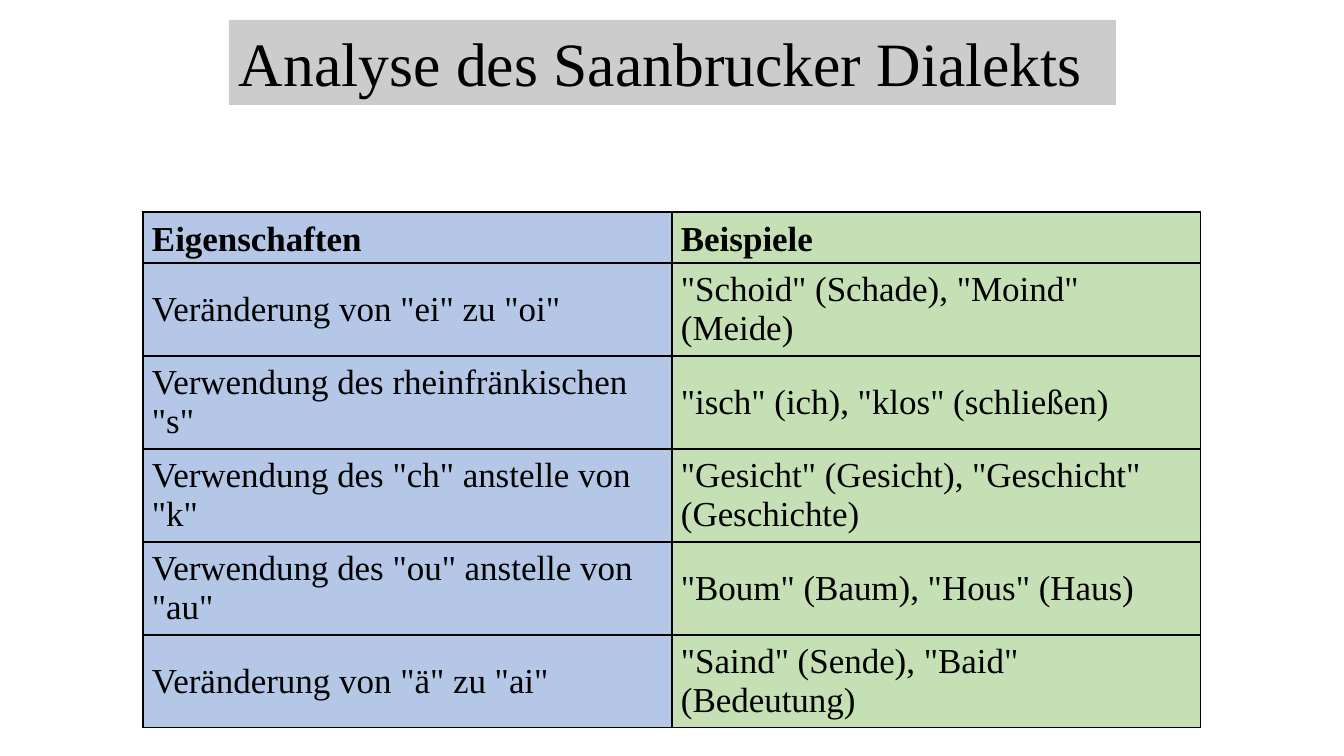
import pptx
import pptx.dml.color
import pptx.enum.shapes
import pptx.enum.text
import pptx.oxml.ns
import pptx.util
from lxml import etree

TITLE = "Analyse des Saanbrucker Dialekts"
ROWS = [
    ("Eigenschaften", "Beispiele"),
    ('Veränderung von "ei" zu "oi"', '"Schoid" (Schade), "Moind" (Meide)'),
    ('Verwendung des rheinfränkischen "s"', '"isch" (ich), "klos" (schließen)'),
    ('Verwendung des "ch" anstelle von "k"', '"Gesicht" (Gesicht), "Geschicht" (Geschichte)'),
    ('Verwendung des "ou" anstelle von "au"', '"Boum" (Baum), "Hous" (Haus)'),
    ('Veränderung von "ä" zu "ai"', '"Saind" (Sende), "Baid" (Bedeutung)'),
]

THEME = {
    "font": "Times New Roman",
    "ink": "000000",
    "title_opacity": 20,
    "columns": ("B4C7E7", "C5E0B4"),
    "title_size": 44,
    "table_size": 25,
    "border": 1,
}

SLIDE_WIDTH, SLIDE_HEIGHT = 1344, 756
TITLE_BOX = (229, 20, 887, 85)
TABLE_LEFT, TABLE_TOP = 143, 212
COLUMN_WIDTH, HEADER_HEIGHT, ROW_HEIGHT = 529, 51, 93
CELL_INSET_X, CELL_INSET_Y = 9, 4
PX_PER_INCH = 100.8


def px(length):
    return pptx.util.Inches(length / PX_PER_INCH)


def color(code):
    return pptx.dml.color.RGBColor.from_string(code)


def set_text(text_frame, text, size, bold=False):
    text_frame.text = text
    font = text_frame.paragraphs[0].runs[0].font
    font.name = THEME["font"]
    font.size = pptx.util.Pt(size)
    font.bold = bold
    font.color.rgb = color(THEME["ink"])


def add_borders(cell):
    """Draw all four cell borders; must run before the cell fill is set."""
    properties = cell._tc.get_or_add_tcPr()
    qn = pptx.oxml.ns.qn
    for side in ("lnL", "lnR", "lnT", "lnB"):
        line = etree.SubElement(properties, qn(f"a:{side}"), w=str(pptx.util.Pt(THEME["border"])))
        fill = etree.SubElement(line, qn("a:solidFill"))
        etree.SubElement(fill, qn("a:srgbClr"), val=THEME["ink"])


def add_title(slide):
    rectangle = pptx.enum.shapes.MSO_SHAPE.RECTANGLE
    title = slide.shapes.add_shape(rectangle, *map(px, TITLE_BOX))
    title.shadow.inherit = False
    title.line.fill.background()
    title.fill.solid()
    title.fill.fore_color.rgb = color(THEME["ink"])
    fill_color = title._element.spPr.find(".//" + pptx.oxml.ns.qn("a:srgbClr"))
    etree.SubElement(fill_color, pptx.oxml.ns.qn("a:alpha"), val=str(THEME["title_opacity"] * 1000))
    set_text(title.text_frame, TITLE, THEME["title_size"])
    title.text_frame.word_wrap = True
    title.text_frame.vertical_anchor = pptx.enum.text.MSO_ANCHOR.TOP
    title.text_frame.paragraphs[0].alignment = pptx.enum.text.PP_ALIGN.LEFT


def add_dialect_table(slide):
    heights = [HEADER_HEIGHT] + [ROW_HEIGHT] * (len(ROWS) - 1)
    columns = THEME["columns"]
    table = slide.shapes.add_table(
        len(ROWS), len(columns), px(TABLE_LEFT), px(TABLE_TOP),
        px(COLUMN_WIDTH * len(columns)), px(sum(heights)),
    ).table
    table.first_row = table.horz_banding = False
    for column in table.columns:
        column.width = px(COLUMN_WIDTH)
    anchors = pptx.enum.text.MSO_ANCHOR
    for row_index, (texts, height) in enumerate(zip(ROWS, heights)):
        table.rows[row_index].height = px(height)
        is_header = row_index == 0
        for column_index, (text, fill) in enumerate(zip(texts, columns)):
            cell = table.cell(row_index, column_index)
            add_borders(cell)
            cell.fill.solid()
            cell.fill.fore_color.rgb = color(fill)
            cell.margin_left = cell.margin_right = px(CELL_INSET_X)
            cell.margin_top = cell.margin_bottom = px(CELL_INSET_Y)
            cell.vertical_anchor = anchors.BOTTOM if is_header else anchors.MIDDLE
            set_text(cell.text_frame, text, THEME["table_size"], bold=is_header)


def main():
    presentation = pptx.Presentation()
    presentation.slide_width = px(SLIDE_WIDTH)
    presentation.slide_height = px(SLIDE_HEIGHT)
    slide = presentation.slides.add_slide(presentation.slide_layouts[6])
    add_title(slide)
    add_dialect_table(slide)
    presentation.save("out.pptx")


if __name__ == "__main__":
    main()
